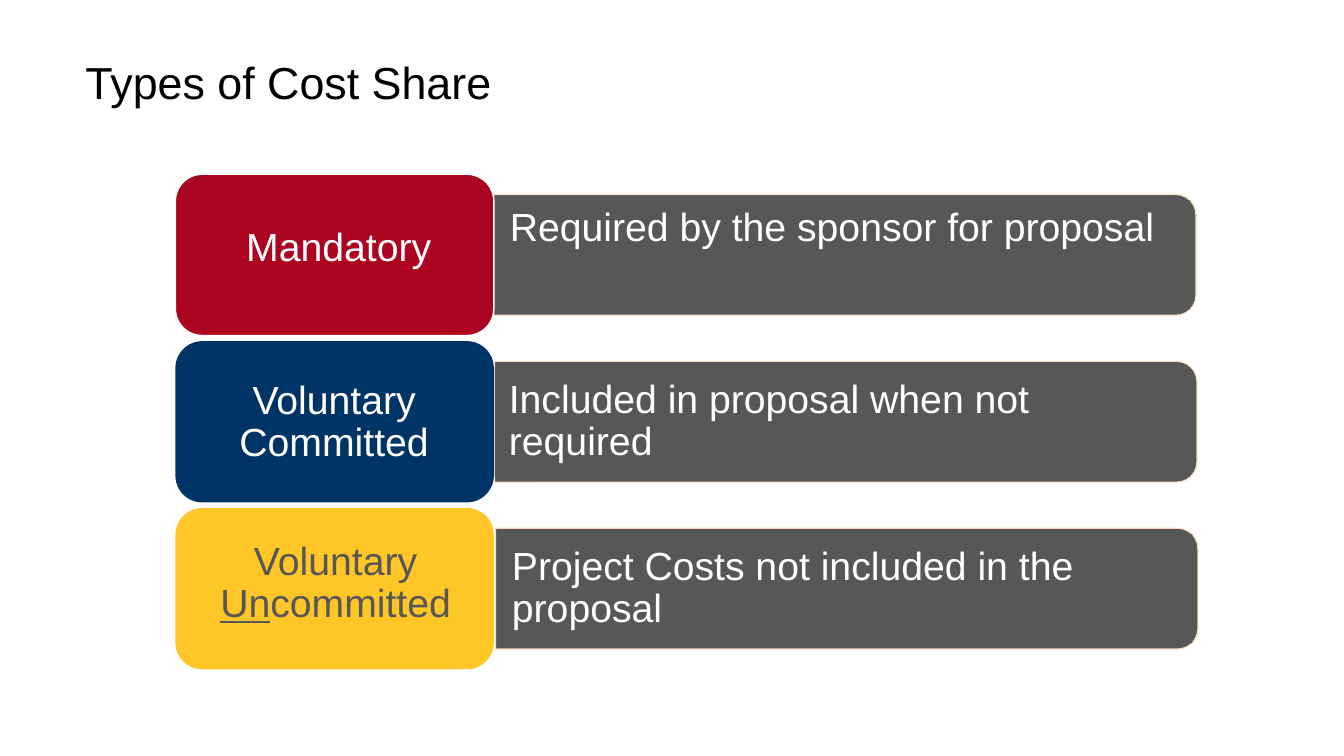
from dataclasses import dataclass

from lxml import etree
from pptx import Presentation
from pptx.dml.color import RGBColor
from pptx.enum.shapes import MSO_SHAPE as Shape
from pptx.enum.text import MSO_ANCHOR as Anchor, PP_ALIGN as Align
from pptx.oxml.ns import qn
from pptx.util import Pt


@dataclass(frozen=True)
class Theme:
    font: str = "Arial"
    title_size: int = 32
    body_size: int = 28
    black: str = "000000"
    white: str = "FFFFFF"
    gray: str = "575757"
    cream: str = "FFEACD"
    red: str = "AB0521"
    navy: str = "003366"
    gold: str = "FFC627"


@dataclass(frozen=True)
class CostShareType:
    label: tuple  # runs of (text, underlined)
    label_box: tuple
    label_color: str
    card_color: str
    card_line: str | None
    detail: str
    detail_left: float
    detail_anchor: Anchor = Anchor.MIDDLE


class SlideBuilder:
    def __init__(self, slide, theme):
        self.slide = slide
        self.theme = theme

    def shape(self, kind, box, fill, line=None):
        shape = self.slide.shapes.add_shape(kind, *map(Pt, box))
        shape.shadow.inherit = False
        shape.fill.solid()
        shape.fill.fore_color.rgb = RGBColor.from_string(fill)
        if line:
            shape.line.color.rgb = RGBColor.from_string(line)
            shape.line.width = Pt(1)
        else:
            shape.line.fill.background()
        return shape

    def bar(self, left, center, length, thickness):
        """Bar with rounded right corners: an upright shape turned by 90 degrees."""
        box = (left + (length - thickness) / 2, center - length / 2, thickness, length)
        bar = self.shape(Shape.ROUND_2_SAME_RECTANGLE, box, self.theme.gray, self.theme.cream)
        bar.rotation = 90
        line_color = bar.line._get_or_add_ln().find(".//" + qn("a:srgbClr"))
        etree.SubElement(line_color, qn("a:alpha"), val="90000")

    def text(self, box, runs, size, color, insets, fill=None,
             align=Align.LEFT, anchor=Anchor.MIDDLE):
        """Text box; runs are (text, underlined) and insets are (sides, top and bottom)."""
        shape = self.slide.shapes.add_textbox(*map(Pt, box))
        if fill:
            shape.fill.solid()
            shape.fill.fore_color.rgb = RGBColor.from_string(fill)
        frame = shape.text_frame
        frame.word_wrap = True
        frame.vertical_anchor = anchor
        frame.margin_left = frame.margin_right = Pt(insets[0])
        frame.margin_top = frame.margin_bottom = Pt(insets[1])
        paragraph = frame.paragraphs[0]
        paragraph.alignment = align
        paragraph.line_spacing = 0.9
        paragraph.font.name = self.theme.font
        paragraph.font.size = Pt(size)
        paragraph.font.color.rgb = RGBColor.from_string(color)
        for text, underlined in runs:
            run = paragraph.add_run()
            run.text = text
            if underlined:
                run.font.underline = True

    def cost_share_row(self, index, item):
        theme = self.theme
        card_top, card_height = 124.5 + 119.2 * index, 115.2
        center = card_top + card_height / 2
        self.bar(352.5 + 0.7 * index, center, length=501.8, thickness=86.4)
        detail_height = 77.8
        self.text((item.detail_left, center - detail_height / 2, 496, detail_height),
                  [(item.detail, False)], theme.body_size, theme.white, (10, 5),
                  fill=theme.gray, anchor=item.detail_anchor)
        self.shape(Shape.ROUNDED_RECTANGLE, (125.3, card_top, 227.5, card_height),
                   item.card_color, item.card_line)
        self.text(item.label_box, item.label, theme.body_size, item.label_color,
                  (14.4, 7.2), fill=item.card_color, align=Align.CENTER)


def main():
    theme = Theme()
    presentation = Presentation()
    presentation.slide_width, presentation.slide_height = Pt(960), Pt(540)
    builder = SlideBuilder(presentation.slides.add_slide(presentation.slide_layouts[6]), theme)

    builder.text((54, 39.6, 851.8, 87.8), [("Types of Cost Share", False)],
                 theme.title_size, theme.black, (7.2, 3.6), anchor=Anchor.TOP)
    cost_share_types = [
        CostShareType((("Mandatory", False),), (138.2, 131, 207.4, 92.9),
                      theme.white, theme.red, theme.white,
                      "Required by the sponsor for proposal", 354.2, Anchor.TOP),
        CostShareType((("Voluntary Committed", False),), (138.2, 253.4, 200.9, 97.2),
                      theme.white, theme.navy, None,
                      "Included in proposal when not required", 353.5),
        CostShareType((("Voluntary ", False), ("Un", True), ("committed", False)),
                      (134.6, 370.1, 210.2, 93.6), theme.gray, theme.gold, None,
                      "Project Costs not included in the proposal", 355.7),
    ]
    for index, item in enumerate(cost_share_types):
        builder.cost_share_row(index, item)
    presentation.save("out.pptx")


if __name__ == "__main__":
    main()
